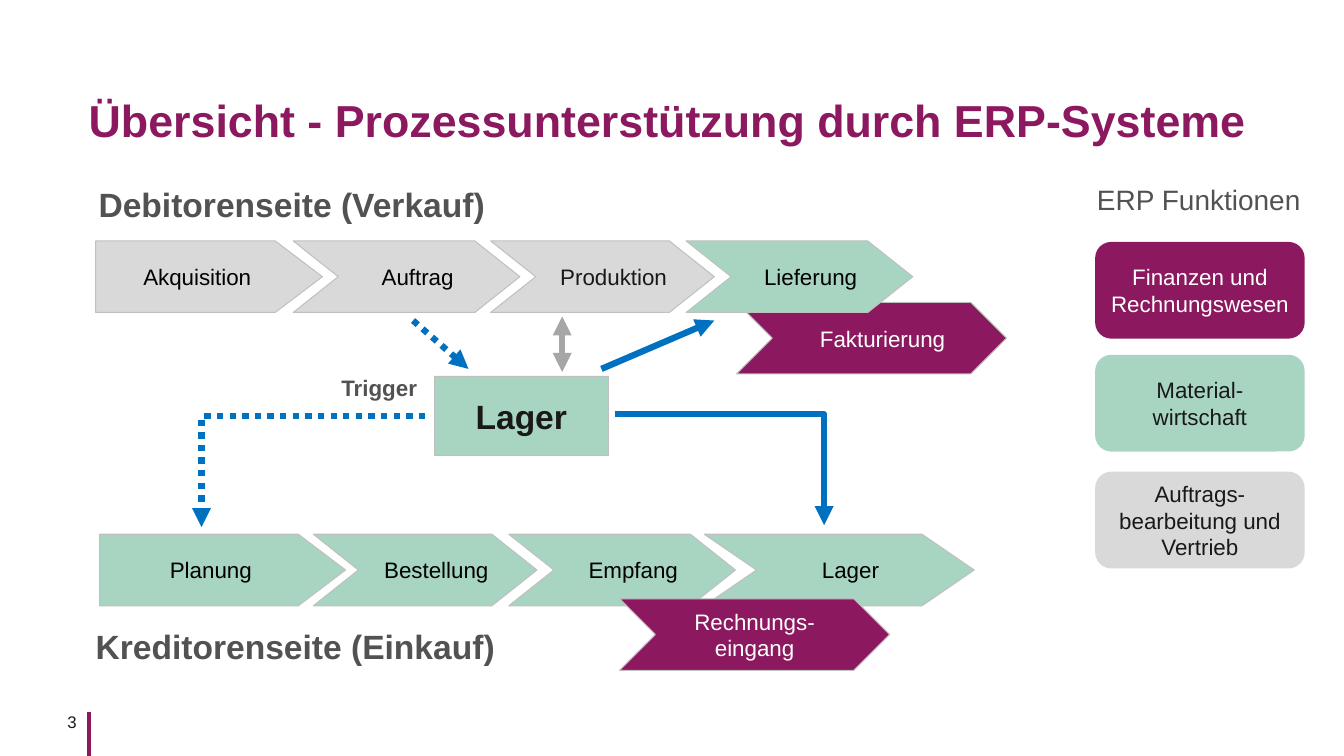
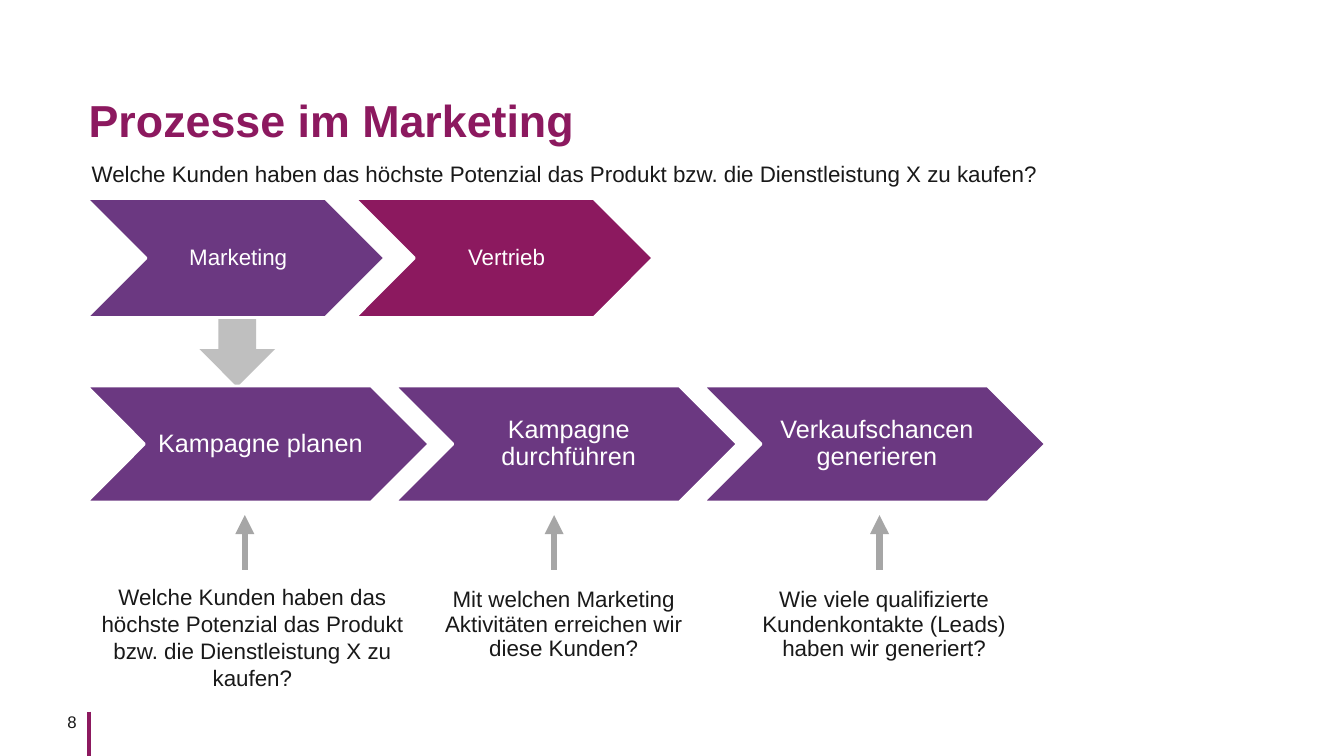
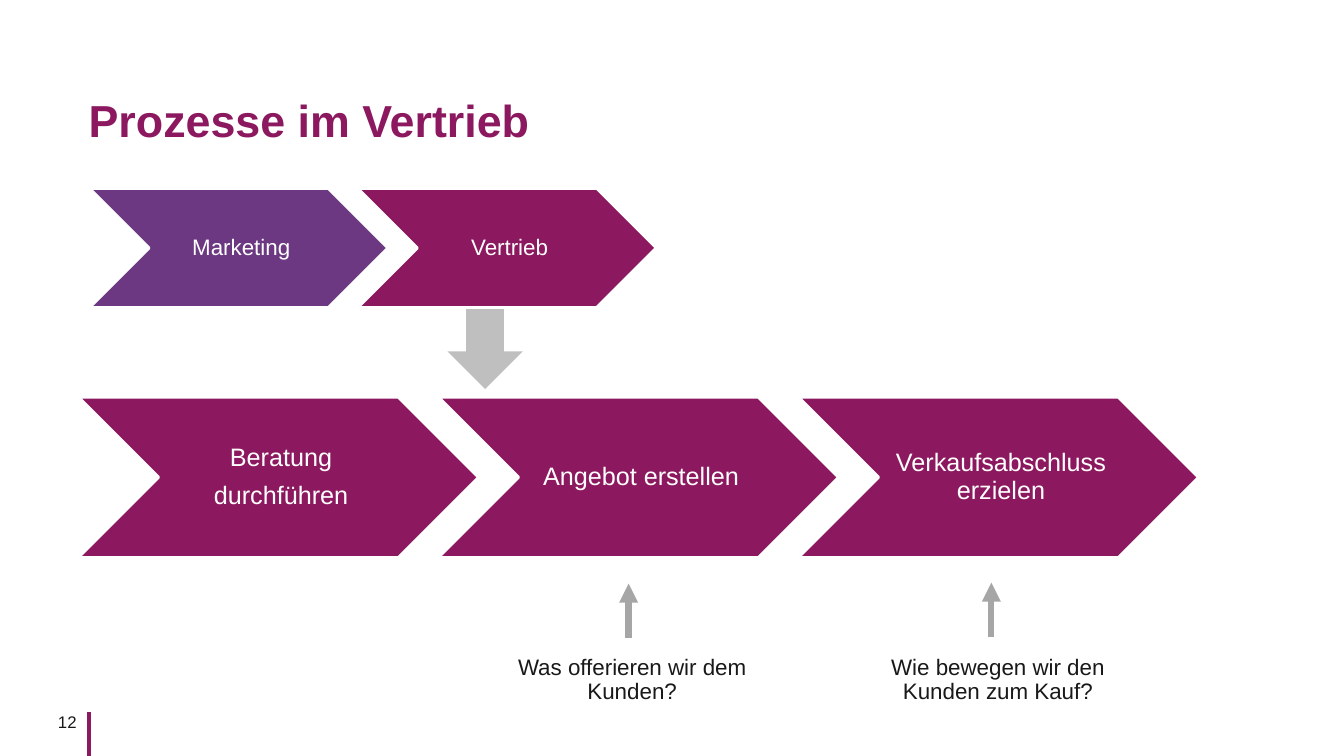
from lxml import etree
from pptx import Presentation
from pptx.dml.color import RGBColor
from pptx.enum import dml, shapes, text
from pptx.oxml import ns
from pptx.util import Inches, Pt

BERRY = RGBColor(0x8C, 0x19, 0x5F)
PURPLE = RGBColor(0x6B, 0x38, 0x81)
MINT = RGBColor(0xA7, 0xD5, 0xC2)
LIGHT = RGBColor(0xD9, 0xD9, 0xD9)
EDGE = RGBColor(0xC0, 0xC0, 0xC0)
SILVER = RGBColor(0xBF, 0xBF, 0xBF)
GREY = RGBColor(0xA6, 0xA6, 0xA6)
SLATE = RGBColor(0x52, 0x52, 0x52)
BLUE = RGBColor(0x00, 0x70, 0xC0)
INK = RGBColor(0x19, 0x19, 0x19)
BLACK = RGBColor(0, 0, 0)
WHITE = RGBColor(0xFF, 0xFF, 0xFF)

FONT = "Arial"
INSETS = (0.1, 0.05, 0.1, 0.05)
NO_INSETS = (0, 0, 0, 0)
STEP_HEIGHT = 0.71
SHAPE = shapes.MSO_SHAPE
ALIGN = text.PP_ALIGN
ANCHOR = text.MSO_ANCHOR


def write(shape, content, size, color, bold=False, align=ALIGN.LEFT,
          anchor=ANCHOR.TOP, insets=INSETS, wrap=True, spacing=1.0, after=0):
    tf = shape.text_frame
    tf.text = content
    tf.word_wrap = wrap
    tf.vertical_anchor = anchor
    tf.margin_left, tf.margin_top, tf.margin_right, tf.margin_bottom = map(Inches, insets)
    for p in tf.paragraphs:
        p.alignment = align
        p.line_spacing = spacing
        for r in p.runs:
            r.font.name = FONT
            r.font.size = Pt(size)
            r.font.bold = bold
            r.font.color.rgb = color
    for p in tf.paragraphs[:-1]:
        p.space_after = Pt(after)


def add_text(s, box, content, size=16, color=INK, **style):
    write(s.shapes.add_textbox(*map(Inches, box)), content, size, color, **style)


def add_shape(s, kind, box, fill, line=None, width=0.75, adj=None):
    sp = s.shapes.add_shape(kind, *map(Inches, box))
    sp.shadow.inherit = False
    sp.fill.solid()
    sp.fill.fore_color.rgb = fill
    if line is None:
        sp.line.fill.background()
    else:
        sp.line.color.rgb = line
        sp.line.width = Pt(width)
    if adj is not None:
        sp.adjustments[0] = adj
    return sp


def add_line(s, start, end, color, width=4.5, dotted=False, bent=False, ends=("tailEnd",)):
    kind = shapes.MSO_CONNECTOR.ELBOW if bent else shapes.MSO_CONNECTOR.STRAIGHT
    line = s.shapes.add_connector(kind, *map(Inches, start + end))
    line.line.color.rgb = color
    line.line.width = Pt(width)
    if dotted:
        line.line.dash_style = dml.MSO_LINE.ROUND_DOT
    properties = line._element.spPr
    if bent:
        properties.find(ns.qn("a:prstGeom")).set("prst", "bentConnector2")
    for end_name in ends:
        etree.SubElement(line.line._get_or_add_ln(), ns.qn("a:" + end_name), type="triangle")
    etree.SubElement(properties, ns.qn("a:effectLst"))


def add_slide(prs, title, number):
    s = prs.slides.add_slide(prs.slide_layouts[6])
    add_line(s, (0.88, 7.06), (0.88, 7.5), BERRY, 3, ends=())
    add_text(s, (0.29, 7.06, 0.59, 0.2), str(number), 12,
             align=ALIGN.RIGHT, insets=(0, 0, 0.12, 0))
    add_text(s, (0.88, 0.76, 12.09, 0.75), title, 32, BERRY, bold=True,
             anchor=ANCHOR.MIDDLE, insets=NO_INSETS, spacing=1.2)
    return s


def add_step(s, label, left, top, width, fill, color=BLACK, kind=SHAPE.CHEVRON,
             adj=0.63, indent=0.32):
    sp = add_shape(s, kind, (left, top, width, STEP_HEIGHT), fill, EDGE, adj=adj)
    write(sp, label, 16, color, align=ALIGN.CENTER, anchor=ANCHOR.MIDDLE,
          insets=(indent, 0.05, 0.1, 0.05), wrap=False)


def add_start(s, label, left, top, width, fill):
    add_step(s, label, left, top, width, fill, kind=SHAPE.PENTAGON, adj=0.66, indent=0.1)


def add_process(s, left, top, width, height, size, steps):
    for i, (label, fill) in enumerate(steps):
        box = (left + i * 0.9 * width, top, width, height)
        sp = add_shape(s, SHAPE.CHEVRON, box, fill, WHITE, 2)
        write(sp, label, size, WHITE, align=ALIGN.CENTER, anchor=ANCHOR.MIDDLE,
              insets=(0.08, 0.03, 0.03, 0.03), spacing=0.9, after=7)


def add_departments(s, left, top):
    add_process(s, left, top, 2.96, 1.18, 16, [("Marketing", PURPLE), ("Vertrieb", BERRY)])


def add_question(s, question, box, arrow_x, arrow_y, spacing=0.9):
    add_line(s, (arrow_x, arrow_y), (arrow_x, arrow_y - 0.54), GREY)
    add_text(s, box, question, align=ALIGN.CENTER, spacing=spacing)


def add_sales_chain(s):
    top = 2.39
    add_step(s, "Produktion", 4.87, top, 2.22, LIGHT, INK)
    add_step(s, "Fakturierung", 7.31, 3, 2.68, BERRY, WHITE, adj=0.5)
    add_step(s, "Lieferung", 6.81, top, 2.25, MINT)
    add_step(s, "Auftrag", 2.91, top, 2.25, LIGHT)
    add_start(s, "Akquisition", 0.95, top, 2.25, LIGHT)


def add_purchase_chain(s):
    top = 5.3
    add_start(s, "Planung", 0.99, top, 2.44, MINT)
    add_step(s, "Bestellung", 3.11, top, 2.22, MINT)
    add_step(s, "Empfang", 5.05, top, 2.25, MINT)
    add_step(s, "Lager", 6.99, top, 2.68, MINT, adj=0.73)
    add_step(s, "Rechnungs-\neingang", 6.15, 5.94, 2.68, BERRY, WHITE, adj=0.5, indent=0.1)


def add_stock(s):
    sp = add_shape(s, SHAPE.RECTANGLE, (4.31, 3.73, 1.73, 0.79), MINT, SILVER, 0.5)
    write(sp, "Lager", 24, INK, bold=True, align=ALIGN.CENTER,
          anchor=ANCHOR.MIDDLE, wrap=False)
    add_line(s, (5.58, 3.69), (5.58, 3.14), GREY, ends=("headEnd", "tailEnd"))
    add_line(s, (4.1, 3.18), (4.65, 3.66), BLUE, dotted=True)
    add_line(s, (5.97, 3.66), (7.09, 3.18), BLUE)
    add_line(s, (6.1, 4.11), (8.18, 5.21), BLUE, bent=True)
    add_line(s, (4.22, 4.13), (2, 5.23), BLUE, dotted=True, bent=True)


def add_legend(s):
    add_text(s, (10.79, 1.76, 2.24, 0.44), "ERP Funktionen", 20, SLATE, wrap=False)
    for label, top, fill, color in (
            ("Finanzen und Rechnungswesen", 2.4, BERRY, WHITE),
            ("Material-wirtschaft", 3.52, MINT, INK),
            ("Auftrags-bearbeitung und Vertrieb", 4.68, LIGHT, INK)):
        sp = add_shape(s, SHAPE.ROUNDED_RECTANGLE, (10.87, top, 2.08, 0.96), fill)
        write(sp, label, 16, color, align=ALIGN.CENTER, anchor=ANCHOR.MIDDLE)


def build_overview(prs):
    s = add_slide(prs, "Übersicht - Prozessunterstützung durch ERP-Systeme", 3)
    add_sales_chain(s)
    add_purchase_chain(s)
    for label, box, size in (
            ("Debitorenseite (Verkauf)", (0.88, 1.78, 4.07, 0.51), 24),
            ("Kreditorenseite (Einkauf)", (0.85, 6.16, 4.2, 0.51), 24),
            ("Trigger", (3.29, 3.66, 0.97, 0.37), 16)):
        add_text(s, box, label, size, SLATE, bold=True, wrap=False)
    add_stock(s)
    add_legend(s)


def build_marketing(prs):
    s = add_slide(prs, "Prozesse im Marketing", 8)
    question = ("Welche Kunden haben das höchste Potenzial das Produkt "
                "bzw. die Dienstleistung X zu kaufen?")
    add_shape(s, SHAPE.DOWN_ARROW, (1.98, 2.58, 0.75, 1.26), SILVER)
    add_text(s, (0.91, 1.59, 11.26, 0.59), question, insets=NO_INSETS)
    add_departments(s, 0.86, 1.97)
    add_process(s, 0.86, 3.83, 3.4, 1.15, 18, [
        ("Kampagne planen", PURPLE),
        ("Kampagne durchführen", PURPLE),
        ("Verkaufschancen generieren", PURPLE)])
    add_question(s, question, (0.76, 5.74, 3.49, 1.18), 2.43, 5.65, spacing=1.0)
    add_question(s, "Mit welchen Marketing Aktivitäten erreichen wir diese Kunden?",
                 (4.21, 5.79, 2.77, 1.14), 5.5, 5.65)
    add_question(s, "Wie viele qualifizierte Kundenkontakte (Leads) haben wir generiert?",
                 (7.35, 5.79, 2.85, 1.14), 8.73, 5.65)


def build_sales(prs):
    s = add_slide(prs, "Prozesse im Vertrieb", 12)
    add_shape(s, SHAPE.DOWN_ARROW, (4.44, 2.95, 0.75, 0.91), SILVER)
    add_departments(s, 0.89, 1.87)
    add_process(s, 0.78, 3.94, 3.97, 1.59, 18, [
        ("Beratung\ndurchführen", BERRY),
        ("Angebot erstellen", BERRY),
        ("Verkaufsabschluss erzielen", BERRY)])
    add_question(s, "Was offerieren wir dem Kunden?", (4.89, 6.46, 2.77, 0.68), 6.24, 6.33)
    add_question(s, "Wie bewegen wir den Kunden zum Kauf?", (8.52, 6.46, 2.77, 0.68), 9.84, 6.32)


def main():
    prs = Presentation()
    prs.slide_width = Inches(13.34)
    prs.slide_height = Inches(7.5)
    build_overview(prs)
    build_marketing(prs)
    build_sales(prs)
    prs.save("out.pptx")


if __name__ == "__main__":
    main()
